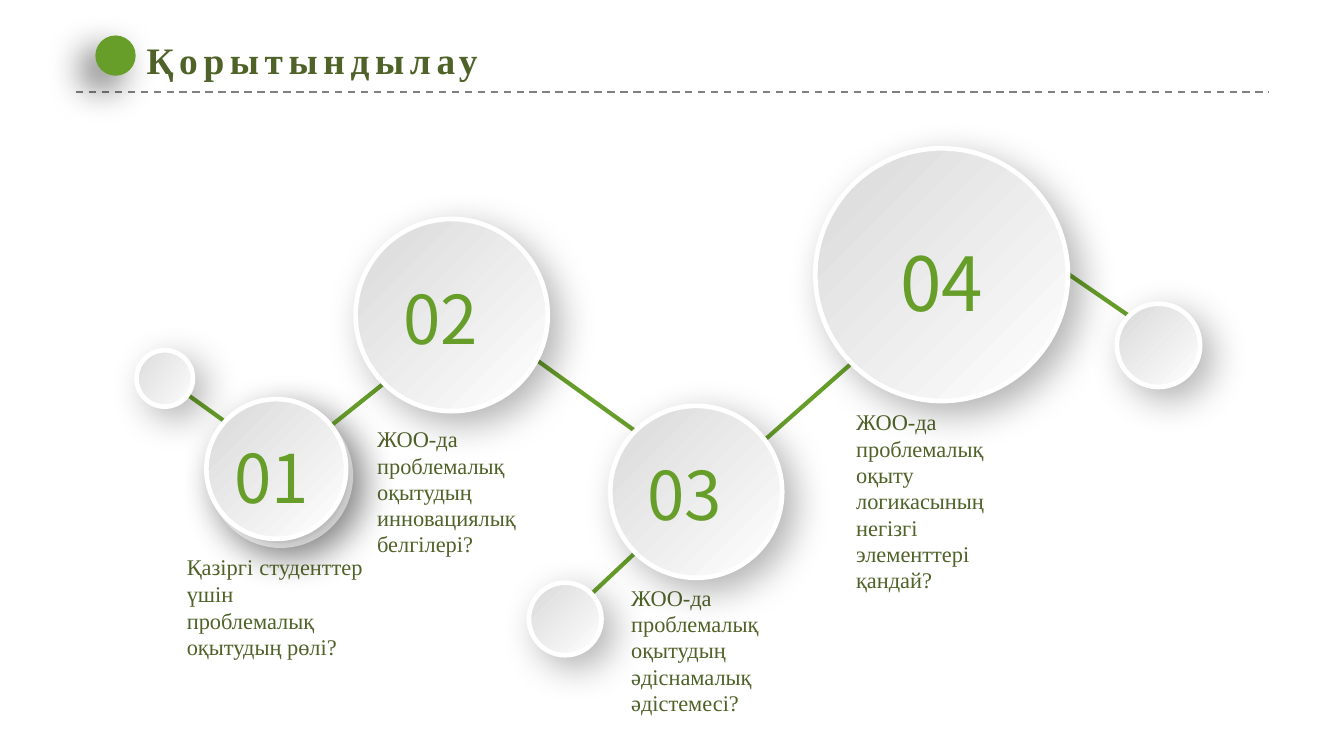
from dataclasses import dataclass

from lxml import etree
from pptx import Presentation
from pptx.dml.color import RGBColor
from pptx.enum.dml import MSO_LINE
from pptx.enum.shapes import MSO_CONNECTOR, MSO_SHAPE
from pptx.enum.text import MSO_ANCHOR, MSO_AUTO_SIZE, PP_ALIGN
from pptx.oxml.ns import qn
from pptx.util import Emu, Inches, Pt

OVAL = MSO_SHAPE.OVAL
STRAIGHT = MSO_CONNECTOR.STRAIGHT
DASH = MSO_LINE.DASH
TOP = MSO_ANCHOR.TOP
GROW = MSO_AUTO_SIZE.SHAPE_TO_FIT_TEXT
LEFT, CENTER, JUSTIFY = PP_ALIGN.LEFT, PP_ALIGN.CENTER, PP_ALIGN.JUSTIFY

SLIDE_WIDTH = Inches(10)
SLIDE_HEIGHT = Emu(SLIDE_WIDTH * 9 // 16)
CELL = SLIDE_WIDTH / 100  # square grid, 100 columns across the slide


@dataclass(frozen=True)
class Theme:
    green: str = "679E2A"
    dark_green: str = "4F6228"
    rule: str = "808080"
    disc_shade: str = "D9D9D9"
    white: str = "FFFFFF"
    shadow: str = "000000"
    text_font: str = "Times New Roman"
    number_font: str = "Noto Sans CJK SC"
    title_size: int = 20
    question_size: int = 12
    number_size: int = 36
    large_number_size: int = 40


@dataclass(frozen=True)
class Shadow:
    opacity: int
    blur: int
    distance: int
    angle: int


@dataclass(frozen=True)
class Disc:
    column: float
    row: float
    diameter: float
    rotation: float = 0


@dataclass(frozen=True)
class Label:
    text: str
    column: float
    row: float
    width: float
    height: float
    size: int
    align: PP_ALIGN = LEFT
    spacing: float | None = None


THEME = Theme()
DISC_SHADOW = Shadow(30, 20, 8, 45)
BULLET_SHADOW = Shadow(60, 20, 10, 135)

# Column and row of both ends of each link between discs
LINKS = [
    (24.6, 31.7, 28.6, 28.5),
    (39.8, 26.7, 47.3, 32.1),
    (56.6, 33, 63.4, 27),
    (14, 29.4, 17.2, 31.7),
    (44, 44.2, 47.3, 41.1),
    (79.5, 20.4, 84, 23.5),
]
QUESTIONS = [
    Label("Қазіргі студенттер үшін проблемалық оқытудың рөлі?",
          13, 40.74, 14.9, 9, THEME.question_size, JUSTIFY),
    Label("ЖОО-да проблемалық оқытудың инновациялық белгілері?",
          27.16, 31.3, 14.9, 10.7, THEME.question_size, spacing=14.1),
    Label("ЖОО-да проблемалық оқытудың әдіснамалық әдістемесі?",
          46.06, 43.1, 14.9, 10.7, THEME.question_size, spacing=14.1),
    Label("ЖОО-да проблемалық оқыту логикасының негізгі элементтері қандай?",
          62.8, 30.04, 14.9, 14.6, THEME.question_size, spacing=14.1),
]
BACKING_DISC = Disc(15.7, 30.2, 10.4)
SMALL_DISCS = [Disc(10.16, 26.06, 4.2, 350.3), Disc(39.36, 43.36, 5.4), Disc(83.1, 22.6, 6.2)]
NUMBERED_DISCS = [
    (Disc(26.46, 16.3, 14.3), Label("02", 29.3, 20.2, 8.6, 6.5, THEME.number_size)),
    (Disc(60.66, 11.04, 18.8),
     Label("04", 64.96, 17.26, 10.2, 6.3, THEME.large_number_size, CENTER)),
    (Disc(45.4, 30.2, 12.8), Label("03", 47.5, 33.34, 8.6, 6.5, THEME.number_size)),
    (Disc(15.36, 29.7, 10.4), Label("01", 16.74, 32.1, 7.7, 5.7, THEME.number_size)),
]


def grid(cells: float) -> Emu:
    return Emu(round(cells * CELL))


def rgb(value: str) -> RGBColor:
    return RGBColor.from_string(value)


def add_shadow(shape, shadow: Shadow) -> None:
    shape.shadow.inherit = False
    effects = shape._element.spPr.find(qn("a:effectLst"))
    outer = etree.SubElement(
        effects, qn("a:outerShdw"), blurRad=str(Pt(shadow.blur)),
        dist=str(Pt(shadow.distance)), dir=str(shadow.angle * 60000),
        algn="ctr", rotWithShape="0")
    color = etree.SubElement(outer, qn("a:srgbClr"), val=THEME.shadow)
    etree.SubElement(color, qn("a:alpha"), val=str(shadow.opacity * 1000))


def add_line(slide, ends: tuple[float, ...], color: str, width: float):
    line = slide.shapes.add_connector(STRAIGHT, *(grid(end) for end in ends))
    line.line.color.rgb = rgb(color)
    line.line.width = Pt(width)
    etree.SubElement(line._element.spPr, qn("a:effectLst"))
    return line


def add_oval(slide, disc: Disc, shadow: Shadow):
    oval = slide.shapes.add_shape(
        OVAL, grid(disc.column), grid(disc.row), grid(disc.diameter), grid(disc.diameter))
    oval.rotation = disc.rotation
    add_shadow(oval, shadow)
    return oval


def add_disc(slide, disc: Disc) -> None:
    oval = add_oval(slide, disc, DISC_SHADOW)
    oval.fill.gradient()
    oval.fill.gradient_angle = 315
    for stop, color in zip(oval.fill.gradient_stops, (THEME.disc_shade, THEME.white)):
        stop.color.rgb = rgb(color)
    oval.line.color.rgb = rgb(THEME.white)
    oval.line.width = Pt(2.5)


def style_run(run, font: str, size: int, color: str) -> None:
    run.font.name = font
    run.font.size = Pt(size)
    run.font.color.rgb = rgb(color)


def add_label(slide, label: Label, font: str, color: str, inset: float):
    box = slide.shapes.add_textbox(
        grid(label.column), grid(label.row), grid(label.width), grid(label.height))
    frame = box.text_frame
    frame.word_wrap = True
    frame.margin_left = frame.margin_right = grid(inset)
    frame.margin_top = frame.margin_bottom = grid(0.4)
    frame.text = label.text
    paragraph = frame.paragraphs[0]
    paragraph.alignment = label.align
    if label.spacing:
        paragraph.line_spacing = Pt(label.spacing)
    style_run(paragraph.runs[0], font, label.size, color)
    return box


def add_title(slide, text: str) -> None:
    title = slide.shapes.title
    title.left, title.top, title.width, title.height = map(grid, (9.9, 2.3, 27.3, 4.4))
    frame = title.text_frame
    frame.text = text
    frame.word_wrap = False
    frame.auto_size = GROW
    frame.vertical_anchor = TOP
    frame.paragraphs[0].alignment = LEFT
    run = frame.paragraphs[0].runs[0]
    style_run(run, THEME.text_font, THEME.title_size, THEME.dark_green)
    run.font.bold = True
    run._r.get_or_add_rPr().set("spc", "300")


def main() -> None:
    deck = Presentation()
    deck.slide_width, deck.slide_height = SLIDE_WIDTH, SLIDE_HEIGHT
    slide = deck.slides.add_slide(deck.slide_layouts[5])

    # Heading with its dashed rule and round bullet
    header_rule = add_line(slide, (5.64, 6.84, 94.4, 6.84), THEME.rule, 1)
    header_rule.line.dash_style = DASH
    bullet = add_oval(slide, Disc(7.1, 2.64, 3), BULLET_SHADOW)
    bullet.fill.solid()
    bullet.fill.fore_color.rgb = rgb(THEME.green)
    bullet.line.fill.background()
    add_title(slide, "Қорытындылау")

    # Chain of links and the questions beneath the discs
    add_disc(slide, BACKING_DISC)
    for ends in LINKS:
        add_line(slide, ends, THEME.green, 2.25)
    for question in QUESTIONS:
        box = add_label(slide, question, THEME.text_font, THEME.dark_green, 0.9)
        box.text_frame.auto_size = GROW

    # Plain discs, then the numbered ones
    for disc in SMALL_DISCS:
        add_disc(slide, disc)
    for disc, number in NUMBERED_DISCS:
        add_disc(slide, disc)
        add_label(slide, number, THEME.number_font, THEME.green, 0.7)

    deck.save("out.pptx")


if __name__ == "__main__":
    main()
